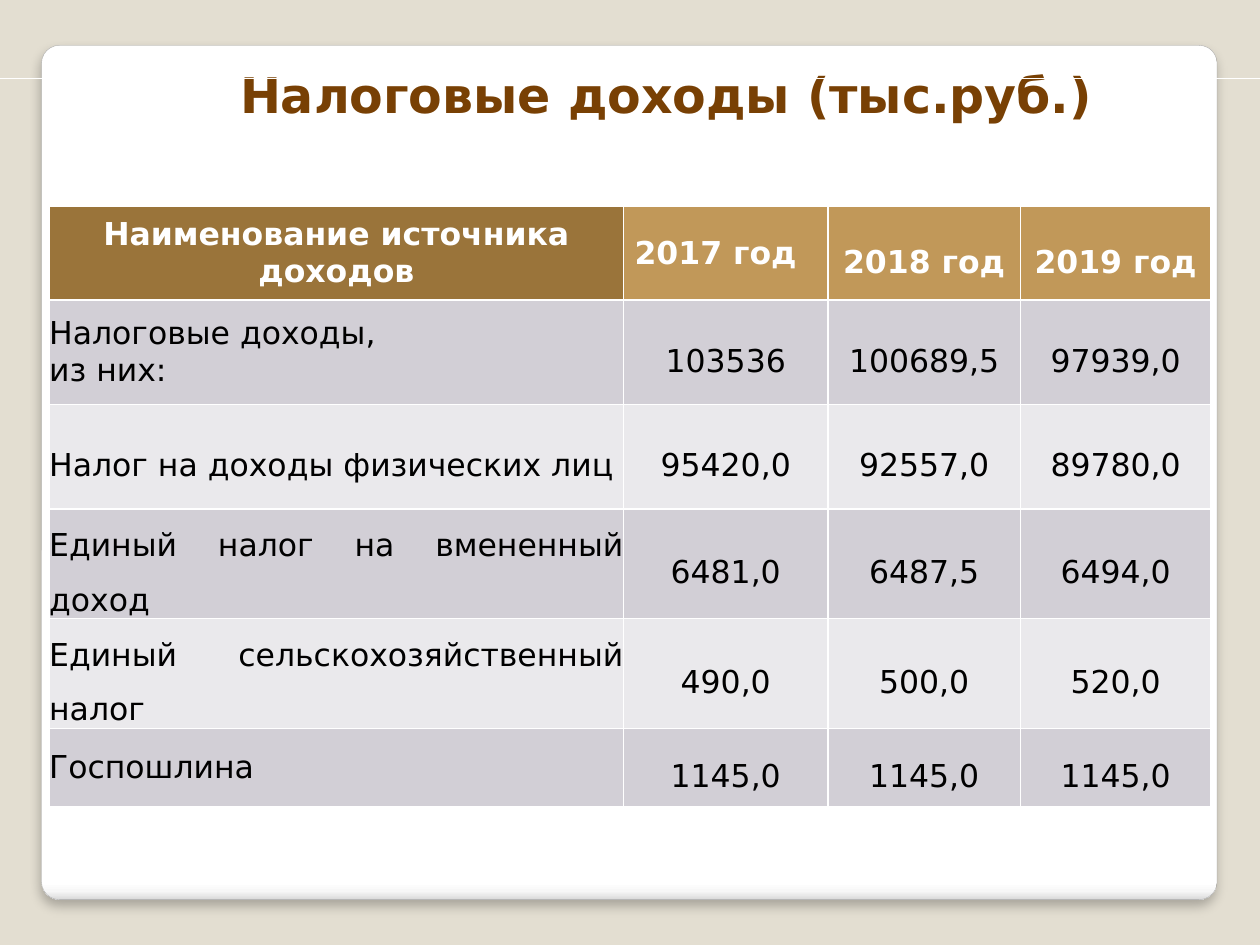
from lxml import etree
from pptx import Presentation
from pptx.dml.color import RGBColor
from pptx.enum import shapes, text
from pptx.oxml import parse_xml
from pptx.oxml.ns import nsdecls, qn
from pptx.util import Inches, Pt

FONT = "DejaVu Sans"
BACK = RGBColor(0xE3, 0xDE, 0xD1)
WHITE = RGBColor(0xFF, 0xFF, 0xFF)
BLACK = RGBColor(0, 0, 0)
BROWN = RGBColor(0x78, 0x40, 0x04)
EDGE = RGBColor(0xA4, 0xA4, 0xA4)
HEAD_FIRST = RGBColor(0x9A, 0x74, 0x3A)
HEAD = RGBColor(0xC1, 0x98, 0x59)
BANDS = [RGBColor(0xEA, 0xE9, 0xEC), RGBColor(0xD2, 0xCF, 0xD6)]

CENTER, JUSTIFY = text.PP_ALIGN.CENTER, text.PP_ALIGN.JUSTIFY
COLS = [4.56, 1.62, 1.53, 1.51]
HEIGHTS = [0.74, 0.83, 0.83, 0.83, 0.83, 0.62]
ROWS = [
    ["Наименование источника доходов", "2017 год", "2018 год", "2019 год"],
    ["Налоговые доходы,\nиз них:", "103536", "100689,5", "97939,0"],
    ["Налог на доходы физических лиц", "95420,0", "92557,0", "89780,0"],
    ["Единый налог на вмененный доход", "6481,0", "6487,5", "6494,0"],
    ["Единый сельскохозяйственный налог", "490,0", "500,0", "520,0"],
    ["Госпошлина", "1145,0", "1145,0", "1145,0"],
]
SINGLE_SPACED = {(0, 0), (0, 1), (1, 0), (5, 0)}


def add_run(p, words, size, color, bold):
    r = p.add_run()
    r.text = words
    r.font.name, r.font.size, r.font.bold = FONT, Pt(size), bold
    r.font.color.rgb = color


prs = Presentation()
prs.slide_width, prs.slide_height = Inches(10), Inches(7.5)
s = prs.slides.add_slide(prs.slide_layouts[5])
s.background.fill.solid()
s.background.fill.fore_color.rgb = BACK

card = s.shapes.add_shape(shapes.MSO_SHAPE.ROUNDED_RECTANGLE,
                          Inches(0.33), Inches(0.36), Inches(9.33), Inches(6.78))
card.adjustments[0] = 0.021
card.line.color.rgb = EDGE
card.line.width = Pt(0.16)
stops = "".join(f'<a:gs pos="{pos}000"><a:srgbClr val="{c}"/></a:gs>' for pos, c in
                [(0, "FFFFFF"), (98, "FFFFFF"), (99, "F7F7F7"), (100, "DADADA")])
card_pr = card._element.spPr
card_pr.find(qn("a:prstGeom")).addnext(parse_xml(
    f'<a:gradFill {nsdecls("a")}><a:gsLst>{stops}</a:gsLst><a:lin ang="5400000" scaled="0"/></a:gradFill>'))
card_pr.append(parse_xml(
    f'<a:effectLst {nsdecls("a")}><a:outerShdw blurRad="{Pt(6)}" dist="{Pt(4)}" dir="5400000" '
    'rotWithShape="0"><a:srgbClr val="000000"><a:alpha val="25000"/></a:srgbClr></a:outerShdw></a:effectLst>'))
s.shapes._spTree.insert(2, card._element)

title = s.shapes.title
title.left, title.top, title.width, title.height = Inches(0.47), Inches(0.47), Inches(9.14), Inches(0.55)
title.fill.solid()
title.fill.fore_color.rgb = WHITE
tf = title.text_frame
tf.word_wrap = True
tf.auto_size = text.MSO_AUTO_SIZE.NONE
tf.vertical_anchor = text.MSO_ANCHOR.MIDDLE
p = tf.paragraphs[0]
p.alignment = CENTER
p._p.get_or_add_pPr().set("indent", str(Inches(0.49)))
add_run(p, "Налоговые доходы (тыс.руб.)", 28, BROWN, True)

table = s.shapes.add_table(len(ROWS), len(COLS), Inches(0.39), Inches(1.64),
                           Inches(sum(COLS)), Inches(sum(HEIGHTS))).table
for col, width in zip(table.columns, COLS):
    col.width = Inches(width)
for i, (row, height) in enumerate(zip(ROWS, HEIGHTS)):
    table.rows[i].height = Inches(height)
    for j, words in enumerate(row):
        cell = table.cell(i, j)
        flush = (j == 0 and i > 0) or (i, j) == (0, 2)
        cell.margin_left = cell.margin_right = Inches(0 if flush else 0.06)
        cell.margin_top = cell.margin_bottom = 0
        cell.vertical_anchor = text.MSO_ANCHOR.MIDDLE
        cell.fill.solid()
        cell.fill.fore_color.rgb = BANDS[i % 2] if i else HEAD if j else HEAD_FIRST
        for n, line in enumerate(words.split("\n")):
            p = cell.text_frame.add_paragraph() if n else cell.text_frame.paragraphs[0]
            p.alignment = JUSTIFY if i and j == 0 else CENTER
            p.line_spacing = 1.0 if (i, j) in SINGLE_SPACED else 1.5
            add_run(p, line, 18, BLACK if i else WHITE, i == 0)
table.cell(0, 1).margin_right = Inches(0.22)

rule = s.shapes.add_connector(shapes.MSO_CONNECTOR.STRAIGHT, 0, Inches(0.62), Inches(10), Inches(0.62))
rule.line.color.rgb = WHITE
rule.line.width = Pt(0.5)
etree.SubElement(rule._element.spPr, qn("a:effectLst"))

prs.save("out.pptx")
